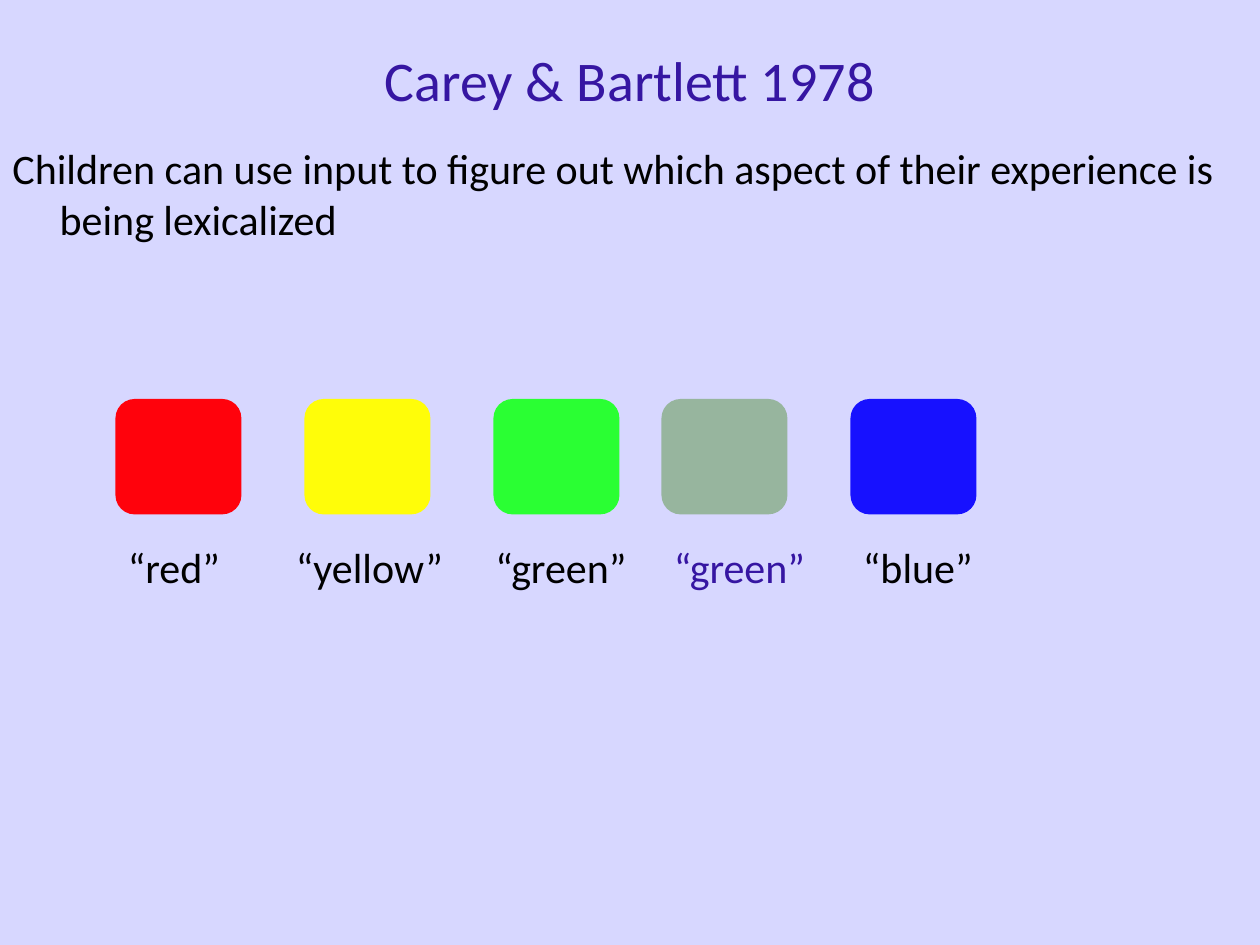
from lxml import etree
from pptx import Presentation
from pptx.dml.color import RGBColor
from pptx.enum.shapes import MSO_SHAPE
from pptx.enum.text import MSO_ANCHOR, PP_ALIGN
from pptx.oxml.ns import qn
from pptx.util import Pt

ROUNDED = MSO_SHAPE.ROUNDED_RECTANGLE
MIDDLE = MSO_ANCHOR.MIDDLE
CENTER = PP_ALIGN.CENTER
TITLE_ONLY = 5

FONT = "Calibri"
COLORS = {
    "background": "D7D7FF",
    "accent": "3616A2",
    "text": "000000",
    "red": "FF020C",
    "yellow": "FFFD09",
    "green": "2AFF33",
    "olive": "4D8D2D",
    "blue": "1711FF",
}

SWATCH_TOP, SWATCH_WIDTH, SWATCH_HEIGHT = 228, 72, 66
LABEL_TOP, LABEL_HEIGHT = 306, 36

# swatch left, fill, opacity in percent, label, label left, label width, label color
SWATCHES = [
    (66, "red", 100, "“red”", 66, 72, "text"),
    (174, "yellow", 100, "“yellow”", 162, 108, "text"),
    (282, "green", 100, "“green”", 276, 108, "text"),
    (378, "olive", 46, "“green”", 378, 96, "accent"),
    (486, "blue", 100, "“blue”", 486, 84, "text"),
]


def rgb(name):
    return RGBColor.from_string(COLORS[name])


def place(shape, left, top, width, height):
    shape.left, shape.top = Pt(left), Pt(top)
    shape.width, shape.height = Pt(width), Pt(height)


def write(shape, text, size, color):
    """Fill a shape with one formatted paragraph and return it."""
    shape.text_frame.word_wrap = True
    paragraph = shape.text_frame.paragraphs[0]
    paragraph.text = text
    font = paragraph.runs[0].font
    font.name, font.size = FONT, Pt(size)
    font.color.rgb = rgb(color)
    return paragraph


def set_title(slide, text):
    title = slide.shapes.title
    place(title, 54, 0, 612, 90)
    title.text_frame.vertical_anchor = MIDDLE
    write(title, text, 32, "accent").alignment = CENTER


def add_text(slide, text, left, top, width, height, color="text"):
    box = slide.shapes.add_textbox(Pt(left), Pt(top), Pt(width), Pt(height))
    return write(box, text, 24, color)


def add_statement(slide, text):
    """Add the body sentence with a hanging indent."""
    paragraph = add_text(slide, text, 0, 78, 708, 108)
    properties = paragraph._p.get_or_add_pPr()
    properties.set("marL", str(Pt(27)))
    properties.set("indent", str(Pt(-27)))


def add_swatch(slide, left, color, opacity):
    swatch = slide.shapes.add_shape(
        ROUNDED, Pt(left), Pt(SWATCH_TOP), Pt(SWATCH_WIDTH), Pt(SWATCH_HEIGHT)
    )
    swatch.shadow.inherit = False
    swatch.fill.solid()
    swatch.fill.fore_color.rgb = rgb(color)
    swatch.line.fill.background()
    if opacity < 100:
        fill_color = swatch._element.spPr.find(qn("a:solidFill"))[0]
        etree.SubElement(fill_color, qn("a:alpha")).set("val", str(opacity * 1000))


def main():
    presentation = Presentation()
    presentation.slide_width, presentation.slide_height = Pt(720), Pt(540)
    slide = presentation.slides.add_slide(presentation.slide_layouts[TITLE_ONLY])
    slide.background.fill.solid()
    slide.background.fill.fore_color.rgb = rgb("background")

    set_title(slide, "Carey & Bartlett 1978")
    add_statement(
        slide,
        "Children can use input to figure out which aspect of their "
        "experience is being lexicalized",
    )
    for left, fill, opacity, label, label_left, label_width, label_color in SWATCHES:
        add_swatch(slide, left, fill, opacity)
        add_text(slide, label, label_left, LABEL_TOP, label_width, LABEL_HEIGHT, label_color)

    presentation.save("out.pptx")


if __name__ == "__main__":
    main()
